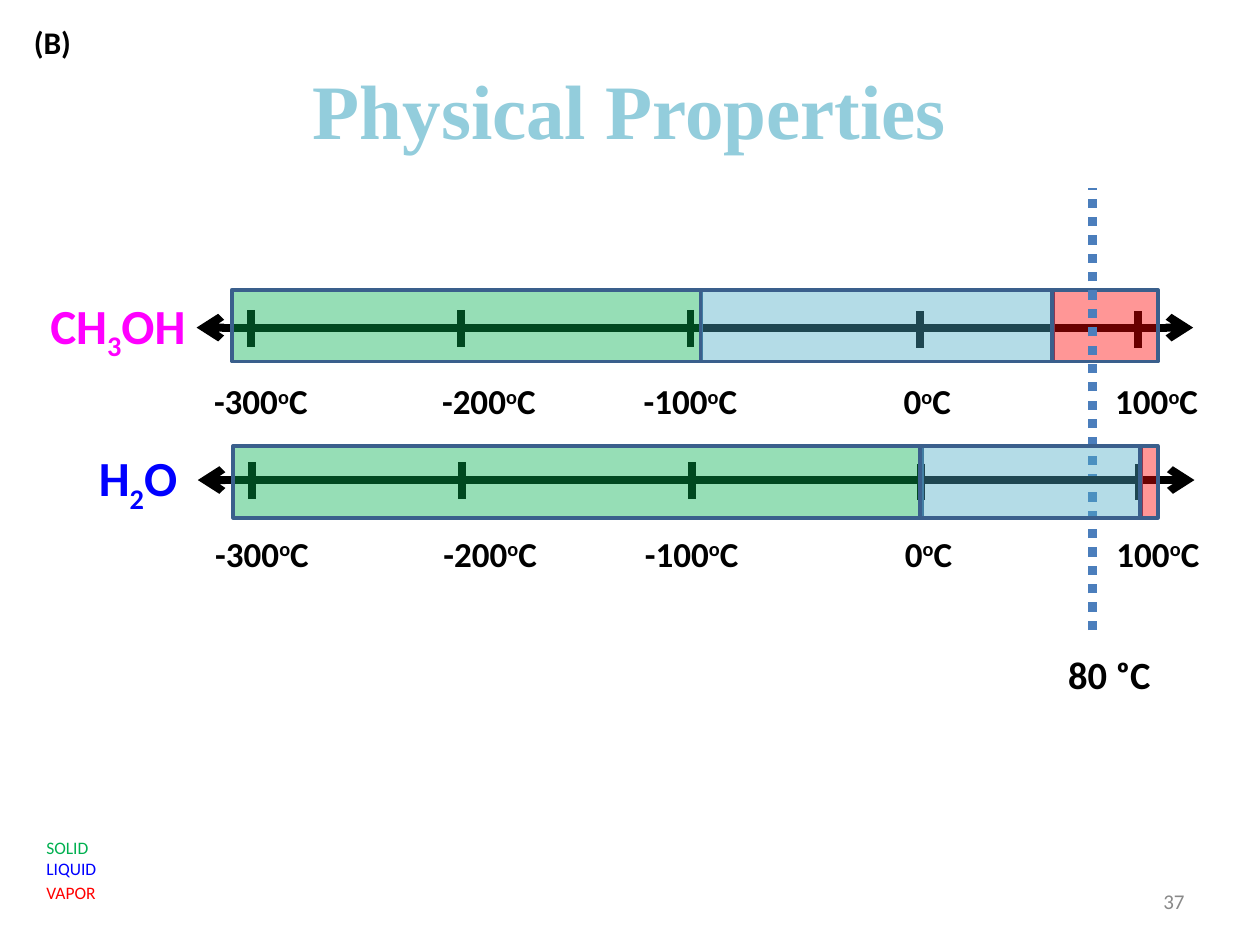
import pptx
import pptx.dml.color
import pptx.enum.dml
import pptx.enum.shapes
import pptx.enum.text
import pptx.oxml
import pptx.oxml.ns
import pptx.util
from pptx.util import Inches

COLORS = {
    "title": "93CDDC", "text": "000000", "number": "898989",
    "solid": "00B050", "liquid": "4BACC6", "vapor": "FF0000",
    "outline": "3A5F8C", "marker": "4B7EBC",
    "methanol": "FF00FF", "water": "0000FF",
}
ALIGN = pptx.enum.text.PP_ALIGN
ANCHOR = pptx.enum.text.MSO_ANCHOR

# Tick offset, tick drop, label offset and value, from the left of an axis
SCALE = [
    (0.43, 0, -0.14, "-300"),
    (2.10, 0, 1.67, "-200"),
    (3.92, 0, 3.27, "-100"),
    (5.74, 0.01, 5.15, "0"),
    (7.47, 0.01, 6.97, "100"),
]


def rgb(name):
    return pptx.dml.color.RGBColor.from_string(COLORS[name])


def add_xml(parent, tag, **attributes):
    element = pptx.oxml.parse_xml(f"<a:{tag} {pptx.oxml.ns.nsdecls('a')}/>")
    for key, value in attributes.items():
        element.set(key, str(value))
    parent.append(element)


def add_text(shapes, box, lines, size, color="text", bold=True, font="Calibri",
             align=ALIGN.LEFT, anchor=ANCHOR.TOP):
    """Each line is a list of (text, baseline in percent) runs."""
    shape = shapes.add_textbox(*map(Inches, box))
    frame = shape.text_frame
    frame.word_wrap = True
    frame.vertical_anchor = anchor
    for index, runs in enumerate(lines):
        paragraph = frame.paragraphs[0] if index == 0 else frame.add_paragraph()
        paragraph.alignment = align
        paragraph.font.name = font
        paragraph.font.size = pptx.util.Pt(size)
        paragraph.font.bold = bold
        paragraph.font.color.rgb = rgb(color)
        for text, baseline in runs:
            run = paragraph.add_run()
            run.text = text
            if baseline:
                run.font._element.set("baseline", str(baseline * 1000))
    return frame


def add_line(shapes, start, end, color="text", width=4.5):
    line = shapes.add_connector(pptx.enum.shapes.MSO_CONNECTOR.STRAIGHT,
                                *map(Inches, start + end))
    line.line.color.rgb = rgb(color)
    line.line.width = pptx.util.Pt(width)
    add_xml(line._element.spPr, "effectLst")
    return line


def add_axis(slide, left, top):
    """Double-headed temperature axis with ticks and labels."""
    shapes = slide.shapes.add_group_shape().shapes
    axis = add_line(shapes, (left, top + 0.14), (left + 7.91, top + 0.14))
    for end in ("headEnd", "tailEnd"):
        add_xml(axis.line._get_or_add_ln(), end, type="arrow")
    for tick, drop, label, value in SCALE:
        x, y = left + tick, top + drop
        add_line(shapes, (x, y), (x, y + 0.29))
        add_text(shapes, (left + label, top + 0.45, 1.3, 0.54),
                 [[(value, 0), ("o", 30), ("C", 0)]], 20,
                 align=ALIGN.CENTER, anchor=ANCHOR.MIDDLE)


def add_phases(slide, top, spans):
    """Translucent bars for solid, liquid and vapor."""
    for phase, (left, right) in zip(("solid", "liquid", "vapor"), spans):
        bar = slide.shapes.add_shape(
            pptx.enum.shapes.MSO_SHAPE.RECTANGLE, Inches(left), Inches(top),
            Inches(right - left), Inches(0.57))
        bar.shadow.inherit = False
        bar.fill.solid()
        bar.fill.fore_color.rgb = rgb(phase)
        add_xml(bar.fill._xPr.solidFill[0], "alpha", val=41000)
        bar.line.color.rgb = rgb("outline")
        bar.line.width = pptx.util.Pt(2)


def add_substance(slide, left, top, formula_left, formula, color, bar_top, spans):
    add_axis(slide, left, top)
    add_text(slide.shapes, (formula_left, top - 0.16, 1.49, 0.62), [formula], 28,
             color, align=ALIGN.CENTER, anchor=ANCHOR.MIDDLE)
    add_phases(slide, bar_top, spans)


def add_marker(slide, x, top, bottom):
    """Dotted reference temperature with its caption."""
    line = add_line(slide.shapes, (x, bottom), (x, top), "marker", 5.25)
    line.line.dash_style = pptx.enum.dml.MSO_LINE.ROUND_DOT
    add_text(slide.shapes, (x - 0.29, bottom + 0.12, 1.17, 0.47),
             [[("80 ᵒC", 0)]], 22)


def add_legend(slide, left, top):
    names = ("SOLID", "LIQUID", "VAPOR")
    frame = add_text(slide.shapes, (left, top, 1.17, 0.64),
                     [[(name, 0)] for name in names], 10, bold=False)
    for paragraph, color in zip(frame.paragraphs, ("solid", "water", "vapor")):
        paragraph.font.color.rgb = rgb(color)
    frame.paragraphs[-1].space_before = pptx.util.Pt(2)


def main():
    presentation = pptx.Presentation()
    presentation.slide_width = Inches(10)
    presentation.slide_height = Inches(7.5)
    slide = presentation.slides.add_slide(presentation.slide_layouts[6])

    # Title
    add_text(slide.shapes, (0.5, 0.24, 9, 1.25), [[("Physical Properties", 0)]],
             44, "title", font="Times New Roman",
             align=ALIGN.CENTER, anchor=ANCHOR.MIDDLE)

    # Phase ranges; the marker lies between the two substances
    add_substance(slide, 1.56, 2.46, 0.19, [("CH", 0), ("3", -25), ("OH", 0)],
                  "methanol", 2.3, [(1.84, 5.57), (5.56, 8.36), (8.35, 9.19)])
    add_marker(slide, 8.67, 1.49, 5)
    add_substance(slide, 1.57, 3.67, 0.35, [("H", 0), ("2", -25), ("O", 0)],
                  "water", 3.54, [(1.85, 7.32), (7.3, 9.06), (9.05, 9.19)])

    # Legend, slide number and part letter
    add_legend(slide, 0.27, 6.59)
    add_text(slide.shapes, (7.17, 6.95, 2.33, 0.4), [[("37", 0)]], 12, "number",
             bold=False, align=ALIGN.RIGHT, anchor=ANCHOR.MIDDLE)
    add_text(slide.shapes, (0.17, 0.13, 0.58, 0.4), [[("(B)", 0)]], 18)

    presentation.save("out.pptx")


if __name__ == "__main__":
    main()
